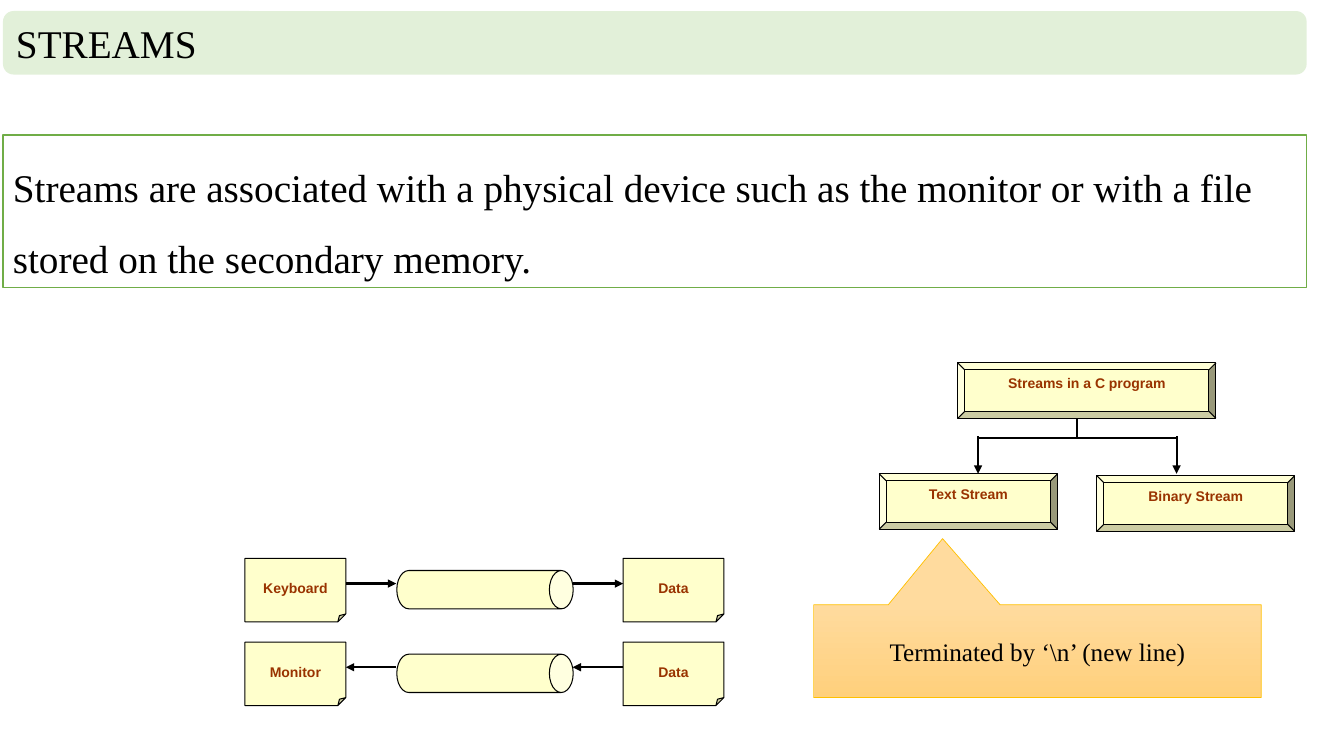
from pptx import Presentation
from pptx.dml.color import RGBColor
from pptx.enum.shapes import MSO_CONNECTOR, MSO_SHAPE as Preset
from pptx.enum.text import MSO_ANCHOR as Anchor, PP_ALIGN as Align
from pptx.oxml.ns import qn
from pptx.util import Inches, Pt
from lxml import etree

SERIF, SANS = "Times New Roman", "Arial"
BLACK, CREAM, BROWN = "000000", "FFFFCC", "993300"


def color(value):
    return RGBColor.from_string(value)


def set_adjustments(box, **values):
    # Written as XML because some presets list no adjustments
    guides = box._element.spPr.find(qn("a:prstGeom")).find(qn("a:avLst"))
    for guide in list(guides):
        guides.remove(guide)
    for name, value in values.items():
        etree.SubElement(guides, qn("a:gd"), name=name, fmla=f"val {round(value * 100000)}")


def add_box(page, preset, left, top, width, height, fill=None, line=None, weight=0.75, **adjust):
    box = page.shapes.add_shape(preset, Inches(left), Inches(top), Inches(width), Inches(height))
    box.shadow.inherit = False
    if fill:
        box.fill.solid()
        box.fill.fore_color.rgb = color(fill)
    if line:
        box.line.color.rgb = color(line)
        box.line.width = Pt(weight)
    else:
        box.line.fill.background()
    if adjust:
        set_adjustments(box, **adjust)
    return box


def write(box, text, size=10, font=SANS, ink=BROWN, bold=False, align=Align.CENTER,
          anchor=Anchor.TOP, spacing=None, inset_top=0.05):
    frame = box.text_frame
    frame.word_wrap = True
    frame.vertical_anchor = anchor
    frame.margin_top = Inches(inset_top)
    para = frame.paragraphs[0]
    para.alignment = align
    if spacing:
        para.line_spacing = spacing
    span = para.add_run()
    span.text = text
    span.font.size, span.font.name, span.font.bold = Pt(size), font, bold
    span.font.color.rgb = color(ink)


def add_line(page, start, end, weight=1.5, arrow=False):
    points = [Inches(value) for value in (*start, *end)]
    connector = page.shapes.add_connector(MSO_CONNECTOR.STRAIGHT, *points)
    connector.line.color.rgb = color(BLACK)
    connector.line.width = Pt(weight)
    properties = connector._element.spPr
    if arrow:
        etree.SubElement(properties.find(qn("a:ln")), qn("a:tailEnd"), type="triangle")
    etree.SubElement(properties, qn("a:effectLst"))


def add_heading(page, left, top, width):
    # Title bar
    bar = add_box(page, Preset.FLOWCHART_ALTERNATE_PROCESS, left, top, width, 0.63, "E2F0D9")
    write(bar, "STREAMS", size=28, font=SERIF, ink=BLACK, align=Align.LEFT, anchor=Anchor.MIDDLE)
    # Definition
    intro = add_box(page, Preset.RECTANGLE, left, top + 1.23, width, 1.51, "FFFFFF", "70AD47", 1)
    write(intro, "Streams are associated with a physical device such as the monitor or "
          "with a file stored on the secondary memory.",
          size=28, font=SERIF, ink=BLACK, align=Align.LEFT, spacing=1.5)


def add_stream_tree(page, left, top):
    # Root and its two kinds
    for text, x, y, width in (("Streams in a C program", 0.78, 0, 2.56),
                              ("Text Stream", 0, 1.1, 1.77),
                              ("Binary Stream", 2.16, 1.12, 1.96)):
        node = add_box(page, Preset.BEVEL, left + x, top + y, width, 0.55, CREAM, BLACK,
                       adj=0.125)
        write(node, text, bold=True)
    # Branches
    first, last, bar = left + 0.98, left + 2.95, top + 0.75
    add_line(page, (left + 1.96, top + 0.55), (left + 1.96, bar))
    add_line(page, (first, bar), (last, bar))
    for x in (first, last):
        add_line(page, (x, bar - 0.02), (x, top + 1.1), arrow=True)


def add_device_row(page, left, top, device, weight, inward):
    # Device and data notes
    for text, x in ((device, 0), ("Data", 3.75)):
        note = add_box(page, Preset.FOLDED_CORNER, left + x, top, 1, 0.63, CREAM, BLACK,
                       adj=0.125)
        write(note, text, bold=True, anchor=Anchor.MIDDLE, inset_top=0.09)
    # Stream pipe, a can lying on its side
    length, thickness = 1.75, 0.38
    pipe = add_box(page, Preset.CAN, left + 2.38 - thickness / 2, top + 0.31 - length / 2,
                   thickness, length, CREAM, BLACK, adj=0.622)
    pipe.rotation = 90
    # Flow arrows
    for x in (1, 3.25):
        ends = [(left + x, top + 0.25), (left + x + 0.5, top + 0.25)]
        add_line(page, *(ends if inward else ends[::-1]), weight=weight, arrow=True)


def add_callout(page, left, top):
    callout = add_box(page, Preset.RECTANGULAR_CALLOUT, left, top, 4.44, 0.92, line="FFC000",
                      weight=0.5, adj1=-0.212, adj2=-1.214)
    callout.fill.gradient()
    callout.fill.gradient_angle = 270
    stops = zip(callout.fill.gradient_stops, ("FFDB9E", "FFD07C"), (0, 1))
    for stop, shade, position in stops:
        stop.color.rgb = color(shade)
        stop.position = position
    write(callout, "Terminated by ‘\\n’ (new line)", size=18, font=SERIF, ink=BLACK,
          anchor=Anchor.MIDDLE)


def main():
    deck = Presentation()
    deck.slide_width, deck.slide_height = Inches(13.33), Inches(7.5)
    page = deck.slides.add_slide(deck.slide_layouts[6])
    add_heading(page, 0.03, 0.11, 12.93)
    add_stream_tree(page, 8.72, 3.6)
    add_device_row(page, 2.43, 5.54, "Keyboard", weight=1.75, inward=True)
    add_device_row(page, 2.43, 6.37, "Monitor", weight=1.5, inward=False)
    add_callout(page, 8.07, 6)
    deck.save("out.pptx")


if __name__ == "__main__":
    main()
